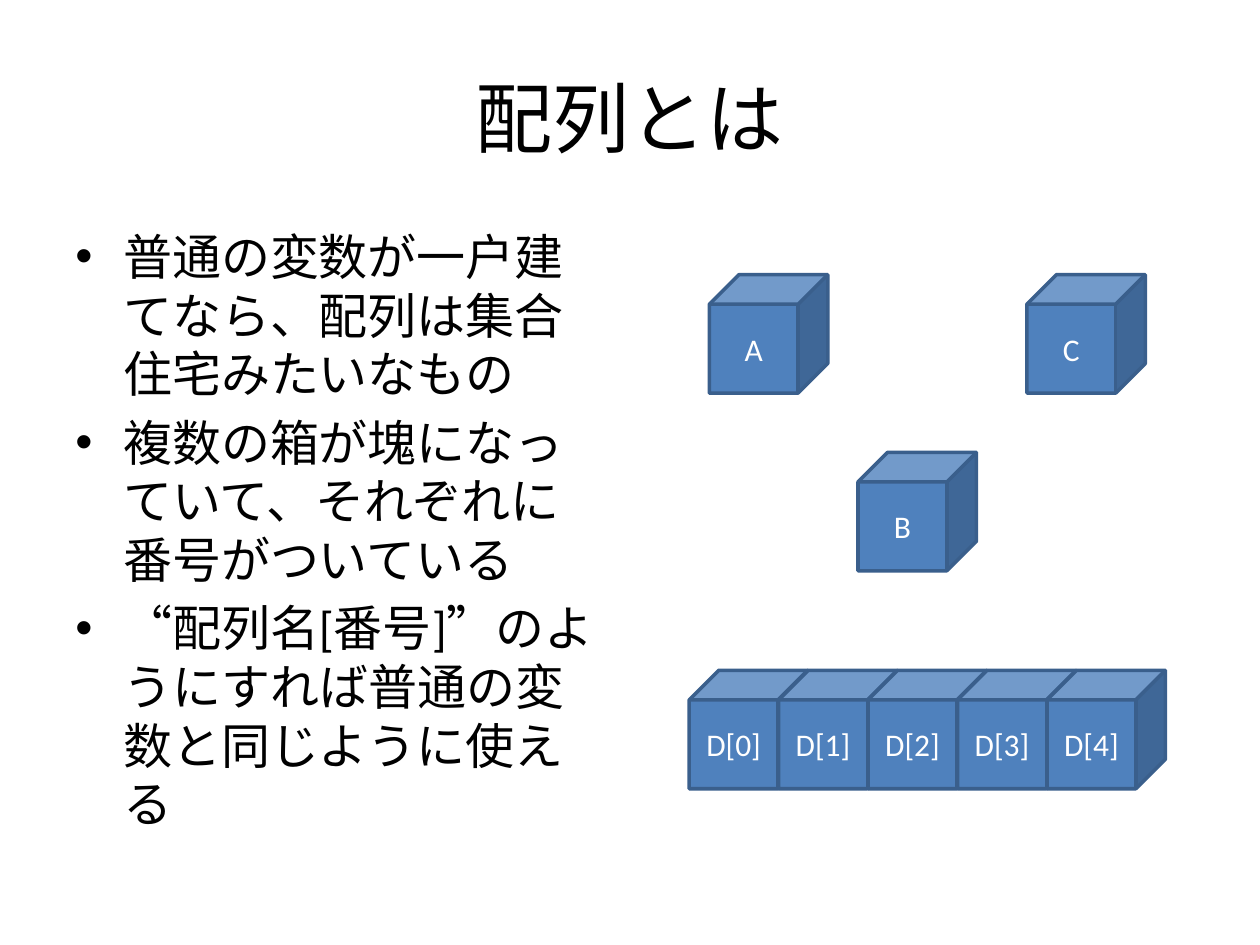
"""Build a slide that explains arrays as rows of numbered boxes."""
from lxml import etree
from pptx import Presentation
from pptx.dml.color import RGBColor
from pptx.enum.shapes import MSO_SHAPE
from pptx.enum.text import MSO_ANCHOR, PP_ALIGN
from pptx.oxml.ns import qn
from pptx.util import Inches, Pt

TITLE = "配列とは"
POINTS = [
    "普通の変数が一戸建てなら、配列は集合住宅みたいなもの",
    "複数の箱が塊になっていて、それぞれに番号がついている",
    "“配列名[番号]”のようにすれば普通の変数と同じように使える",
]
VARIABLES = [("A", 5.63, 2.18), ("B", 6.81, 3.59), ("C", 8.15, 2.18)]
ARRAY_NAME, ARRAY_LENGTH = "D", 5
ARRAY_LEFT, ARRAY_TOP = 5.47, 5.32

BOX_SIZE = 0.94
BOX_STEP = 0.71
MARGIN = 0.5
LATIN_FONT, JAPANESE_FONT = "Calibri", "Noto Sans CJK JP"
BLACK = RGBColor(0x00, 0x00, 0x00)
WHITE = RGBColor(0xFF, 0xFF, 0xFF)
BLUE = RGBColor(0x4F, 0x81, 0xBD)
DARK_BLUE = RGBColor(0x3A, 0x5F, 0x8C)


def style_run(run, size, color, latin=LATIN_FONT):
    run.font.size = Pt(size)
    run.font.color.rgb = color
    run.font.name = latin
    etree.SubElement(run.font._element, qn("a:ea"), typeface=JAPANESE_FONT)


def add_bullet(paragraph):
    properties = paragraph._p.get_or_add_pPr()
    indent = Inches(0.38)
    properties.set("marL", str(indent))
    properties.set("indent", str(-indent))
    etree.SubElement(properties, qn("a:buFont"), typeface="Arial")
    etree.SubElement(properties, qn("a:buChar"), char="•")


def add_text(slide, left, top, width, height):
    frame = slide.shapes.add_textbox(*map(Inches, (left, top, width, height))).text_frame
    frame.word_wrap = True
    return frame


def add_title(slide):
    frame = add_text(slide, MARGIN, 0.3, 10 - 2 * MARGIN, 1.25)
    frame.text = TITLE
    frame.vertical_anchor = MSO_ANCHOR.MIDDLE
    heading = frame.paragraphs[0]
    heading.alignment = PP_ALIGN.CENTER
    style_run(heading.runs[0], 44, BLACK, JAPANESE_FONT)


def add_points(slide):
    frame = add_text(slide, MARGIN, 1.75, 4.42, 4.95)
    frame.text = "\n".join(POINTS)
    for point in frame.paragraphs:
        point.line_spacing = Pt(33.5)
        point.space_before = Pt(5.6)
        add_bullet(point)
        style_run(point.runs[0], 28, BLACK)


def add_box(slide, label, left, top):
    box = slide.shapes.add_shape(
        MSO_SHAPE.CUBE, *map(Inches, (left, top, BOX_SIZE, BOX_SIZE)))
    box.shadow.inherit = False
    box.fill.solid()
    box.fill.fore_color.rgb = BLUE
    box.line.color.rgb = DARK_BLUE
    box.line.width = Pt(2)
    frame = box.text_frame
    frame.text = label
    frame.vertical_anchor = MSO_ANCHOR.MIDDLE
    frame.paragraphs[0].alignment = PP_ALIGN.CENTER
    style_run(frame.paragraphs[0].runs[0], 18, WHITE)


def main():
    deck = Presentation()
    deck.slide_width, deck.slide_height = Inches(10), Inches(7.5)
    slide = deck.slides.add_slide(deck.slide_layouts[6])
    add_title(slide)
    add_points(slide)
    elements = [(f"{ARRAY_NAME}[{i}]", ARRAY_LEFT + i * BOX_STEP, ARRAY_TOP)
                for i in range(ARRAY_LENGTH)]
    for label, left, top in VARIABLES + elements:
        add_box(slide, label, left, top)
    deck.save("out.pptx")


if __name__ == "__main__":
    main()
